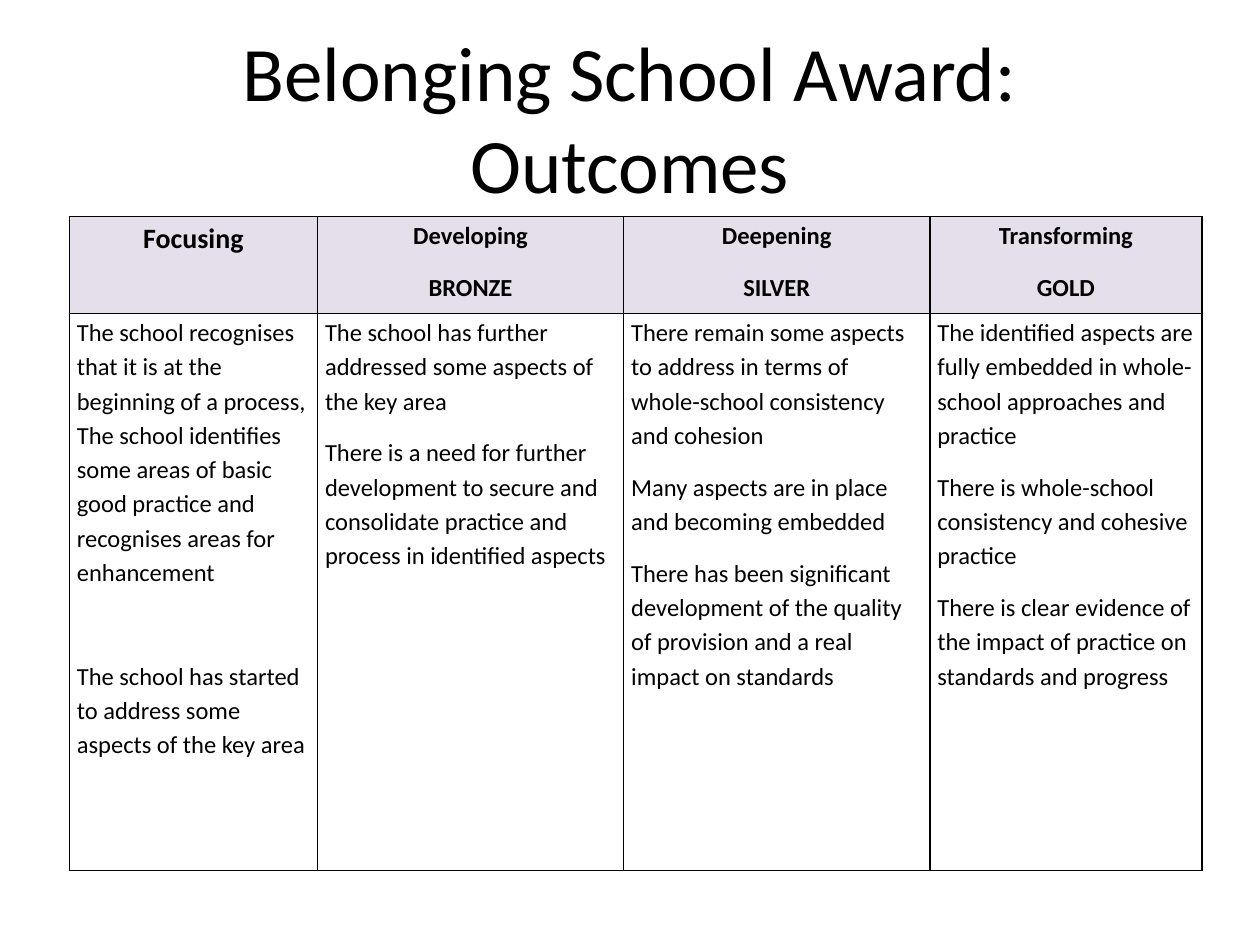
"""Build the Belonging School Award outcomes slide."""
from lxml import etree
from pptx import Presentation
from pptx import util as u
from pptx.dml.color import RGBColor
from pptx.enum import text
from pptx.oxml.ns import qn

COLORS = {"ink": "000000", "header": "E5DFEC"}
FONT = "Calibri"
COLUMN_WIDTHS = [1.97, 2.43, 2.43, 2.16]
ROW_HEIGHTS = [0.77, 4.42]
LEVELS = [
    ("Focusing", [
        "The school recognises that it is at the beginning of a process, The school "
        "identifies some areas of basic good practice and recognises areas for enhancement",
        "The school has started to address some aspects of the key area"]),
    ("Developing\nBRONZE", [
        "The school has further addressed some aspects of the key area",
        "There is a need for further development to secure and consolidate practice "
        "and process in identified aspects"]),
    ("Deepening\nSILVER", [
        "There remain some aspects to address in terms of whole-school consistency and cohesion",
        "Many aspects are in place and becoming embedded",
        "There has been significant development of the quality of provision and a real "
        "impact on standards"]),
    ("Transforming\nGOLD", [
        "The identified aspects are fully embedded in whole-school approaches and practice",
        "There is whole-school consistency and cohesive practice",
        "There is clear evidence of the impact of practice on standards and progress"]),
]


def format_spans(para, size, bold=False):
    for span in para.runs:
        span.font.name = FONT
        span.font.size = u.Pt(size)
        span.font.bold = bold
        span.font.color.rgb = RGBColor.from_string(COLORS["ink"])


def draw_borders(cell):
    properties = cell._tc.get_or_add_tcPr()
    for side in ("a:lnL", "a:lnR", "a:lnT", "a:lnB"):
        line = etree.SubElement(properties, qn(side), w=str(u.Pt(1)))
        fill = etree.SubElement(line, qn("a:solidFill"))
        etree.SubElement(fill, qn("a:srgbClr"), val=COLORS["ink"])


deck = Presentation()
deck.slide_width, deck.slide_height = u.Inches(10), u.Inches(7.5)
page = deck.slides.add_slide(deck.slide_layouts[5])

title = page.shapes.title
title.left, title.top = int(deck.slide_width * 0.05), int(deck.slide_height * 0.04)
title.width, title.height = int(deck.slide_width * 0.9), u.Inches(1.25)
title.text_frame.text = "Belonging School Award: Outcomes"
title.text_frame.vertical_anchor = text.MSO_ANCHOR.MIDDLE
title.text_frame.paragraphs[0].alignment = text.PP_ALIGN.CENTER
format_spans(title.text_frame.paragraphs[0], 44)

frame = page.shapes.add_table(
    len(ROW_HEIGHTS), len(LEVELS), u.Inches(0.55), u.Inches(1.72),
    u.Inches(sum(COLUMN_WIDTHS)), u.Inches(sum(ROW_HEIGHTS)))
table = frame.table
table.first_row = table.horz_banding = False
for column, width in zip(table.columns, COLUMN_WIDTHS):
    column.width = u.Inches(width)
for row, height in zip(table.rows, ROW_HEIGHTS):
    row.height = u.Inches(height)

for index, (heading, outcomes) in enumerate(LEVELS):
    for row_index, content in enumerate((heading, "\n".join(outcomes))):
        is_header = row_index == 0
        cell = table.cell(row_index, index)
        cell.margin_left = cell.margin_right = u.Inches(0.06)
        cell.margin_top = cell.margin_bottom = 0
        draw_borders(cell)
        if is_header:
            cell.fill.solid()
            cell.fill.fore_color.rgb = RGBColor.from_string(COLORS["header"])
        else:
            cell.fill.background()
        cell.text_frame.text = content
        for para in cell.text_frame.paragraphs:
            para.alignment = text.PP_ALIGN.CENTER if is_header else text.PP_ALIGN.LEFT
            para.line_spacing = 1.15
            para.space_after = u.Pt(10)
            format_spans(para, 16 if is_header and index == 0 else 14, is_header)

table.cell(1, 0).text_frame.paragraphs[1].space_before = u.Pt(29.7)

deck.save("out.pptx")
